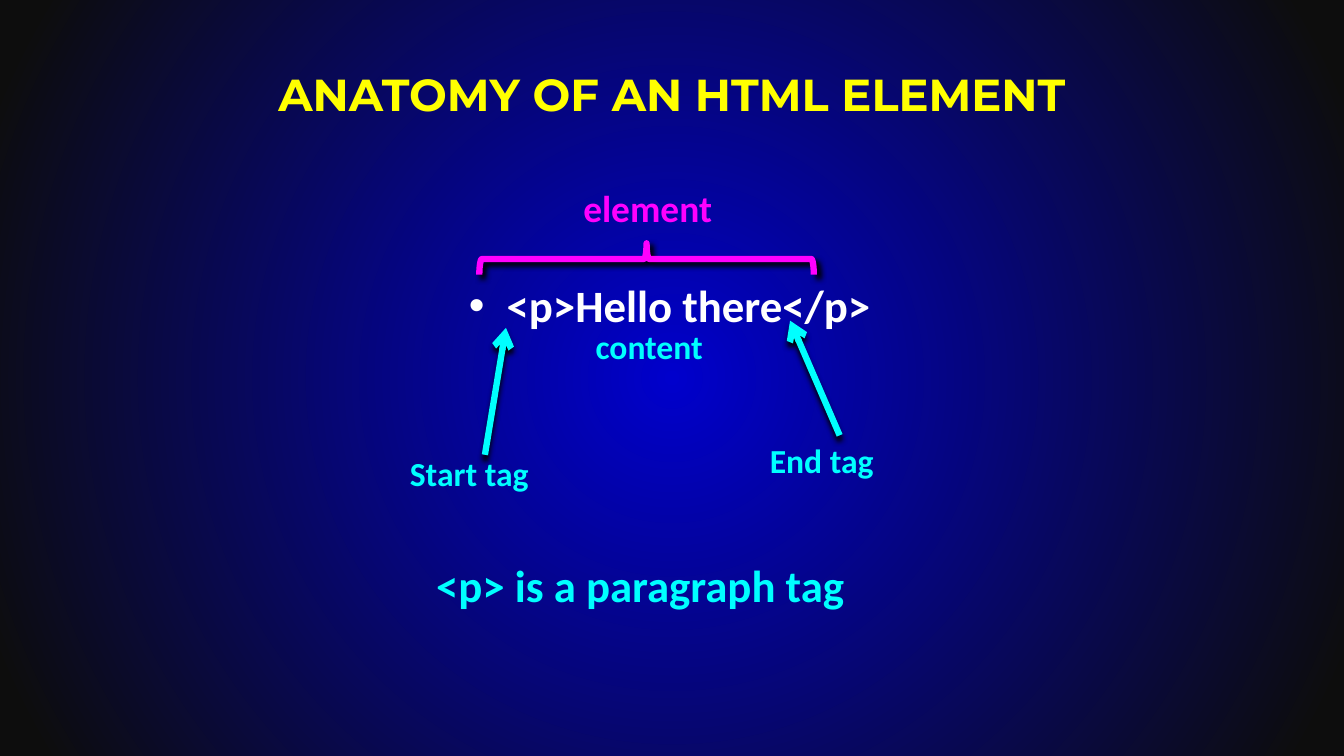
from dataclasses import dataclass

from pptx import Presentation
from pptx.dml.color import RGBColor
from pptx.enum.shapes import MSO_CONNECTOR, MSO_SHAPE
from pptx.enum.text import MSO_ANCHOR, MSO_AUTO_SIZE, PP_ALIGN
from pptx.oxml import parse_xml
from pptx.oxml.ns import nsdecls, qn
from pptx.shapes.base import BaseShape
from pptx.slide import Slide
from pptx.text.text import TextFrame
from pptx.util import Cm, Pt


@dataclass(frozen=True)
class Theme:
    glow: str = "0000CC"
    edge: str = "0D0D0D"
    shade: str = "000000"
    title: str = "FFFF00"
    code: str = "FFFFFF"
    tag: str = "00FFFF"
    element: str = "FF00FF"
    head: str = "Montserrat"
    body: str = "Calibri"
    large: float = 32
    medium: float = 26.7
    small: float = 24
    stroke: float = 4.5


@dataclass(frozen=True)
class Box:
    left: float
    top: float
    width: float
    height: float


@dataclass(frozen=True)
class Label:
    text: str
    box: Box
    size: float
    color: str
    wrap: bool = True


@dataclass(frozen=True)
class Arrow:
    start: tuple[float, float]
    end: tuple[float, float]


THEME = Theme()
TITLE = Box(1.7, 0.76, 30.48, 3.18)
CODE = Box(11.56, 6.88, 17.93, 12.57)
BRACE = Box(15.9, 2.31, 0.79, 8.43)
ARROWS = [
    Arrow((12.22, 11.46), (12.75, 8.26)),
    Arrow((21.16, 10.97), (19.91, 8.08)),
]
LABELS = [
    Label("Start tag", Box(10.08, 11.28, 3.99, 1.27), THEME.small, THEME.tag),
    Label("End tag", Box(19.15, 10.97, 3.99, 1.27), THEME.small, THEME.tag),
    Label("content", Box(14.76, 8.1, 3.99, 1.27), THEME.small, THEME.tag),
    Label("<p> is a paragraph tag", Box(10.74, 13.94, 10.9, 1.63),
          THEME.large, THEME.tag, wrap=False),
    Label("element", Box(14.45, 4.55, 3.78, 1.4),
          THEME.medium, THEME.element, wrap=False),
]


def lengths(box: Box) -> tuple[Cm, Cm, Cm, Cm]:
    return Cm(box.left), Cm(box.top), Cm(box.width), Cm(box.height)


def place(shape: BaseShape, box: Box) -> None:
    shape.left, shape.top, shape.width, shape.height = lengths(box)


def write(frame: TextFrame, text: str, size: float, color: str,
          font: str = THEME.body) -> None:
    frame.text = text
    style = frame.paragraphs[0].runs[0].font
    style.name = font
    style.size = Pt(size)
    style.bold = True
    style.color.rgb = RGBColor.from_string(color)


def paint(slide: Slide) -> None:
    """Fill the background with a round gradient from the centre."""
    slide.element.cSld.insert(0, parse_xml(
        f'<p:bg {nsdecls("p", "a")}><p:bgPr><a:gradFill rotWithShape="1"><a:gsLst>'
        f'<a:gs pos="0"><a:srgbClr val="{THEME.glow}"/></a:gs>'
        f'<a:gs pos="95000"><a:srgbClr val="{THEME.edge}"/></a:gs></a:gsLst>'
        '<a:path path="circle">'
        '<a:fillToRect l="50000" t="50000" r="50000" b="50000"/></a:path>'
        '</a:gradFill><a:effectLst/></p:bgPr></p:bg>'))


def outline(shape: BaseShape, color: str, angle: int) -> None:
    """Give a shape its thick line and a shadow falling at the angle."""
    shape.line.color.rgb = RGBColor.from_string(color)
    shape.line.width = Pt(THEME.stroke)
    shape.element.spPr.append(parse_xml(
        f'<a:effectLst {nsdecls("a")}><a:outerShdw blurRad="{Pt(4)}" '
        f'dist="{Pt(4)}" dir="{angle * 60000}" rotWithShape="0">'
        f'<a:srgbClr val="{THEME.shade}"/></a:outerShdw></a:effectLst>'))


def add_title(slide: Slide) -> None:
    title = slide.shapes.title
    place(title, TITLE)
    frame = title.text_frame
    frame.vertical_anchor = MSO_ANCHOR.MIDDLE
    write(frame, "ANATOMY OF AN HTML ELEMENT", THEME.large, THEME.title, THEME.head)
    frame.paragraphs[0].alignment = PP_ALIGN.CENTER


def add_code(slide: Slide) -> None:
    body = slide.placeholders[1]
    place(body, CODE)
    frame = body.text_frame
    frame.text = ""
    line = frame.paragraphs[0]
    props = line._p.get_or_add_pPr()
    props.set("marL", "0")
    props.set("indent", "0")
    props.append(parse_xml(f'<a:buNone {nsdecls("a")}/>'))
    line.space_before = Pt(0)
    write(frame, "<p>Hello there</p>", THEME.large, THEME.code)


def add_arrow(slide: Slide, arrow: Arrow) -> None:
    ends = [Cm(value) for value in (*arrow.start, *arrow.end)]
    line = slide.shapes.add_connector(MSO_CONNECTOR.STRAIGHT, *ends)
    outline(line, THEME.tag, 90)
    line.element.spPr.find(qn("a:ln")).append(
        parse_xml(f'<a:tailEnd {nsdecls("a")} type="arrow"/>'))


def add_brace(slide: Slide) -> None:
    brace = slide.shapes.add_shape(MSO_SHAPE.RIGHT_BRACE, *lengths(BRACE))
    brace.rotation = 270
    brace.fill.background()
    outline(brace, THEME.element, 45)


def add_label(slide: Slide, label: Label) -> None:
    frame = slide.shapes.add_textbox(*lengths(label.box)).text_frame
    frame.word_wrap = label.wrap
    frame.auto_size = MSO_AUTO_SIZE.SHAPE_TO_FIT_TEXT
    write(frame, label.text, label.size, label.color)


def main() -> None:
    deck = Presentation()
    deck.slide_width, deck.slide_height = Cm(33.87), Cm(19.05)
    slide = deck.slides.add_slide(deck.slide_layouts[1])
    paint(slide)
    add_title(slide)
    add_code(slide)
    for arrow in ARROWS:
        add_arrow(slide, arrow)
    add_brace(slide)
    for label in LABELS:
        add_label(slide, label)
    deck.save("out.pptx")


if __name__ == "__main__":
    main()
